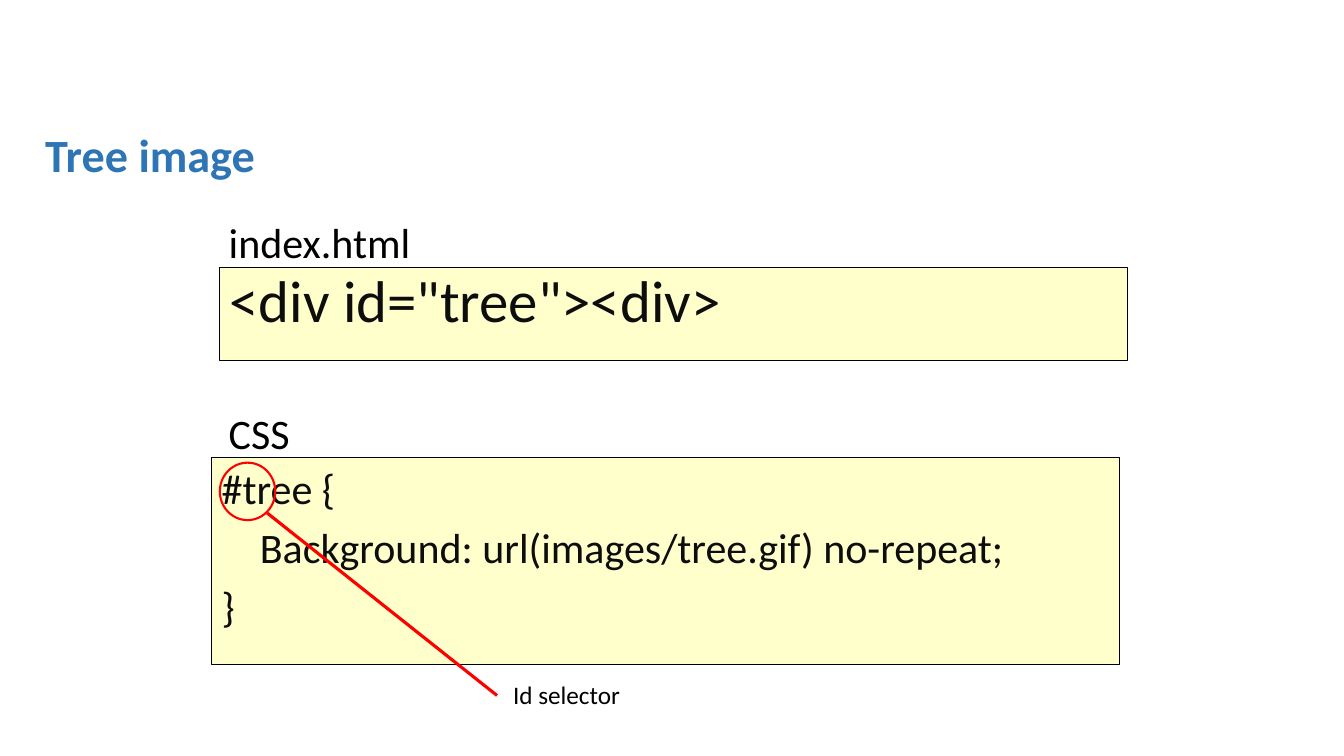
from lxml.etree import SubElement
from pptx import Presentation
from pptx.dml.color import RGBColor
from pptx.enum.shapes import MSO_CONNECTOR, MSO_SHAPE
from pptx.enum.text import MSO_ANCHOR, MSO_AUTO_SIZE, PP_ALIGN
from pptx.oxml.ns import qn
from pptx.util import Pt

SCALE = 9144
FONT = "Calibri"
BLUE = RGBColor(0x2E, 0x75, 0xB6)
CREAM = RGBColor(0xFF, 0xFF, 0xCC)
INK = RGBColor(0x0D, 0x0D, 0x0D)
BLACK = RGBColor(0, 0, 0)
RED = RGBColor(0xFF, 0, 0)


def px(*sizes):
    return [size * SCALE for size in sizes]


def write(shape, lines, size, color, bold=False, hang=0, pitch=None,
          anchor=MSO_ANCHOR.TOP, wrap=True):
    frame = shape.text_frame
    frame.word_wrap = wrap
    frame.vertical_anchor = anchor
    for row, line in enumerate(lines):
        para = frame.add_paragraph() if row else frame.paragraphs[0]
        para.text = line
        para.alignment = PP_ALIGN.LEFT
        para.line_spacing = pitch
        if row:
            para.space_before = Pt(size * 0.2)
        if hang:
            props = para._p.get_or_add_pPr()
            props.set("marL", str(hang * SCALE))
            props.set("indent", str(-hang * SCALE))
        font = para.font
        font.name = FONT
        font.size = Pt(size)
        font.bold = bold
        font.color.rgb = color


def label(slide, box, line, size, color, **style):
    shape = slide.shapes.add_textbox(*px(*box))
    write(shape, [line], size, color, **style)
    return shape


def outline(slide, kind, box, color, width):
    shape = slide.shapes.add_shape(kind, *px(*box))
    shape.shadow.inherit = False
    shape.fill.background()
    shape.line.color.rgb = color
    shape.line.width = Pt(width)
    return shape


def panel(slide, box, lines, size, **style):
    shape = outline(slide, MSO_SHAPE.RECTANGLE, box, BLACK, 0.75)
    shape.fill.solid()
    shape.fill.fore_color.rgb = CREAM
    write(shape, lines, size, INK, **style)


def pointer(slide, start, end):
    line = slide.shapes.add_connector(
        MSO_CONNECTOR.STRAIGHT, *px(*start, *end))
    line.line.color.rgb = RED
    line.line.width = Pt(2.25)
    SubElement(line._element.spPr, qn("a:effectLst"))


def main():
    deck = Presentation()
    deck.slide_width, deck.slide_height = px(1333, 750)
    slide = deck.slides.add_slide(deck.slide_layouts[6])

    label(slide, (35, 107, 1268, 99), "Tree image", 33, BLUE,
          bold=True, pitch=0.9, anchor=MSO_ANCHOR.MIDDLE)
    panel(slide, (218, 265, 900, 93), ['<div id="tree"><div>'], 42,
          hang=19, pitch=0.9)
    panel(slide, (210, 454, 900, 205),
          ["#tree {", "\tBackground: url(images/tree.gif) no-repeat;", "}"],
          30, hang=38)
    for top, name in ((399, "CSS"), (210, "index.html")):
        label(slide, (217, top, 900, 71), name, 30, BLACK, hang=38)

    outline(slide, MSO_SHAPE.OVAL, (218, 459, 55, 57), RED, 1.5)
    pointer(slide, (265, 509), (493, 690))
    note = label(slide, (499, 669, 127, 40), "Id selector", 18, BLACK,
                 wrap=False)
    note.text_frame.auto_size = MSO_AUTO_SIZE.SHAPE_TO_FIT_TEXT

    deck.save("out.pptx")


if __name__ == "__main__":
    main()
